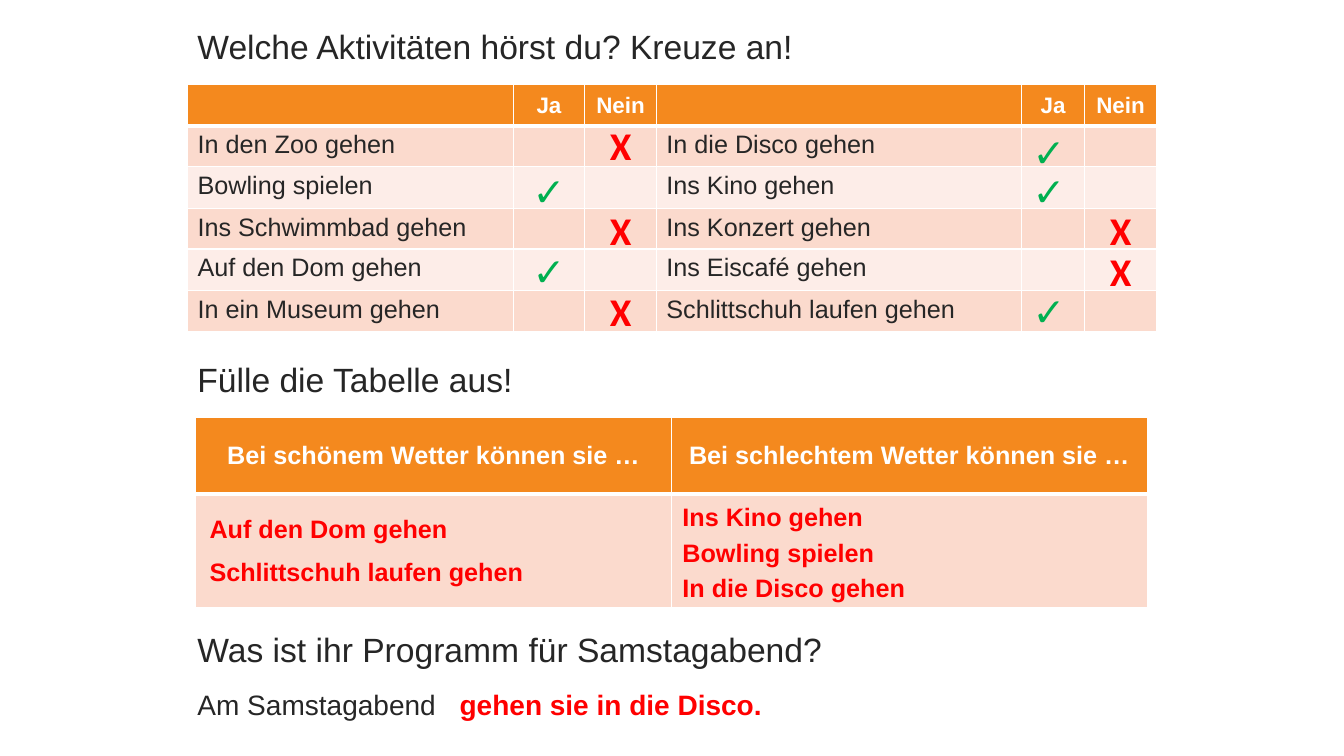
from lxml.etree import SubElement
from pptx import Presentation
from pptx.dml.color import RGBColor
from pptx.enum.text import MSO_ANCHOR, MSO_AUTO_SIZE, PP_ALIGN
from pptx.oxml.ns import qn
from pptx.util import Emu, Pt

PX = 9144
SLIDE_SIZE = (1333, 750)
ORANGE, PINK, PALE, WHITE = "F4891E", "FBDACD", "FDEDE8", "FFFFFF"
DARK, RED, GREEN = "262626", "FF0000", "00B050"

PROMPTS = [
    ("Welche Aktivitäten hörst du? Kreuze an!", 21, 843, 51, 24),
    ("Fülle die Tabelle aus!", 351, 843, 51, 24),
    ("Was ist ihr Programm für Samstagabend?", 619, 843, 51, 24),
    ("Am Samstagabend", 677, 606, 44, 20),
]
PROMPT_LEFT = 186

ACTIVITY_ROWS = [
    ["", "Ja", "Nein", "", "Ja", "Nein"],
    ["In den Zoo gehen", "", "", "In die Disco gehen", "", ""],
    ["Bowling spielen", "", "", "Ins Kino gehen", "", ""],
    ["Ins Schwimmbad gehen", "", "", "Ins Konzert gehen", "", ""],
    ["Auf den Dom gehen", "", "", "Ins Eiscafé gehen", "", ""],
    ["In ein Museum gehen", "", "", "Schlittschuh laufen gehen", "", ""],
]
WEATHER_ROWS = [
    ["Bei schönem Wetter können sie …", "Bei schlechtem Wetter können sie …"],
    ["", ""],
]

MARKS = [
    ("X", RED, 580, (115, 200, 280)),
    ("X", RED, 1076, (200, 240)),
    ("✓", GREEN, 509, (161, 240)),
    ("✓", GREEN, 1005, (122, 161, 280)),
]
MARK_SIZE = (71, 57)

ANSWERS = [
    ("Auf den Dom gehen", 198, 504, 40, 18),
    ("Schlittschuh laufen gehen", 198, 547, 40, 18),
    ("Ins Kino gehen", 667, 492, 40, 18),
    ("Bowling spielen", 667, 528, 40, 18),
    ("In die Disco gehen", 667, 563, 40, 18),
    ("gehen sie in die Disco.", 446, 677, 44, 20),
]
ANSWER_WIDTH = 378


def px(length):
    return Emu(length * PX)


def color(value):
    return RGBColor.from_string(value)


def style_paragraph(paragraph, size, text_color, bold, font_name="Arial"):
    for run in paragraph.runs:
        run.font.name = font_name
        run.font.size = Pt(size)
        run.font.bold = bold
        run.font.color.rgb = color(text_color)


def add_text(slide, text, box, size, text_color, bold=False,
             font_name="Arial", alignment=PP_ALIGN.LEFT):
    shape = slide.shapes.add_textbox(*map(px, box))
    text_frame = shape.text_frame
    text_frame.word_wrap = True
    text_frame.auto_size = MSO_AUTO_SIZE.SHAPE_TO_FIT_TEXT
    text_frame.text = text
    paragraph = text_frame.paragraphs[0]
    paragraph.alignment = alignment
    style_paragraph(paragraph, size, text_color, bold, font_name)


def set_borders(cell, top, bottom):
    properties = cell._tc.get_or_add_tcPr()
    for side, width in (("L", 1), ("R", 1), ("T", top), ("B", bottom)):
        line = SubElement(properties, qn(f"a:ln{side}"), w=str(Pt(width)))
        fill = SubElement(line, qn("a:solidFill"))
        SubElement(fill, qn("a:srgbClr"), val=WHITE)


def add_grid(slide, rows, left, top, widths, heights, header_size):
    frame = slide.shapes.add_table(
        len(rows), len(widths), px(left), px(top), px(sum(widths)), px(sum(heights)))
    table = frame.table
    for column, width in zip(table.columns, widths):
        column.width = px(width)
    for row, height in zip(table.rows, heights):
        row.height = px(height)
    for row_index, texts in enumerate(rows):
        header = row_index == 0
        for column_index, text in enumerate(texts):
            cell = table.cell(row_index, column_index)
            set_borders(cell, 3 if row_index == 1 else 1, 3 if header else 1)
            cell.fill.solid()
            cell.fill.fore_color.rgb = color(
                ORANGE if header else PINK if row_index % 2 else PALE)
            cell.vertical_anchor = MSO_ANCHOR.MIDDLE if header else MSO_ANCHOR.TOP
            if text:
                cell.text_frame.text = text
                paragraph = cell.text_frame.paragraphs[0]
                paragraph.alignment = PP_ALIGN.CENTER if header else PP_ALIGN.LEFT
                style_paragraph(paragraph, header_size if header else 18,
                                WHITE if header else DARK, header)


def main():
    presentation = Presentation()
    presentation.slide_width, presentation.slide_height = map(px, SLIDE_SIZE)
    slide = presentation.slides.add_slide(presentation.slide_layouts[6])

    add_grid(slide, ACTIVITY_ROWS, 186, 84, (323, 71, 71, 362, 63, 71),
             [41, 40, 41, 40, 41, 40], 16)
    add_grid(slide, WEATHER_ROWS, 194, 414, (472, 472), (76, 113), 18)

    for text, top, width, height, size in PROMPTS:
        add_text(slide, text, (PROMPT_LEFT, top, width, height), size, DARK)
    for mark, mark_color, left, tops in MARKS:
        for top in tops:
            add_text(slide, mark, (left, top, *MARK_SIZE), 28, mark_color, True,
                     "Calibri", PP_ALIGN.CENTER)
    for text, left, top, height, size in ANSWERS:
        add_text(slide, text, (left, top, ANSWER_WIDTH, height), size, RED, True)

    presentation.save("out.pptx")


if __name__ == "__main__":
    main()
